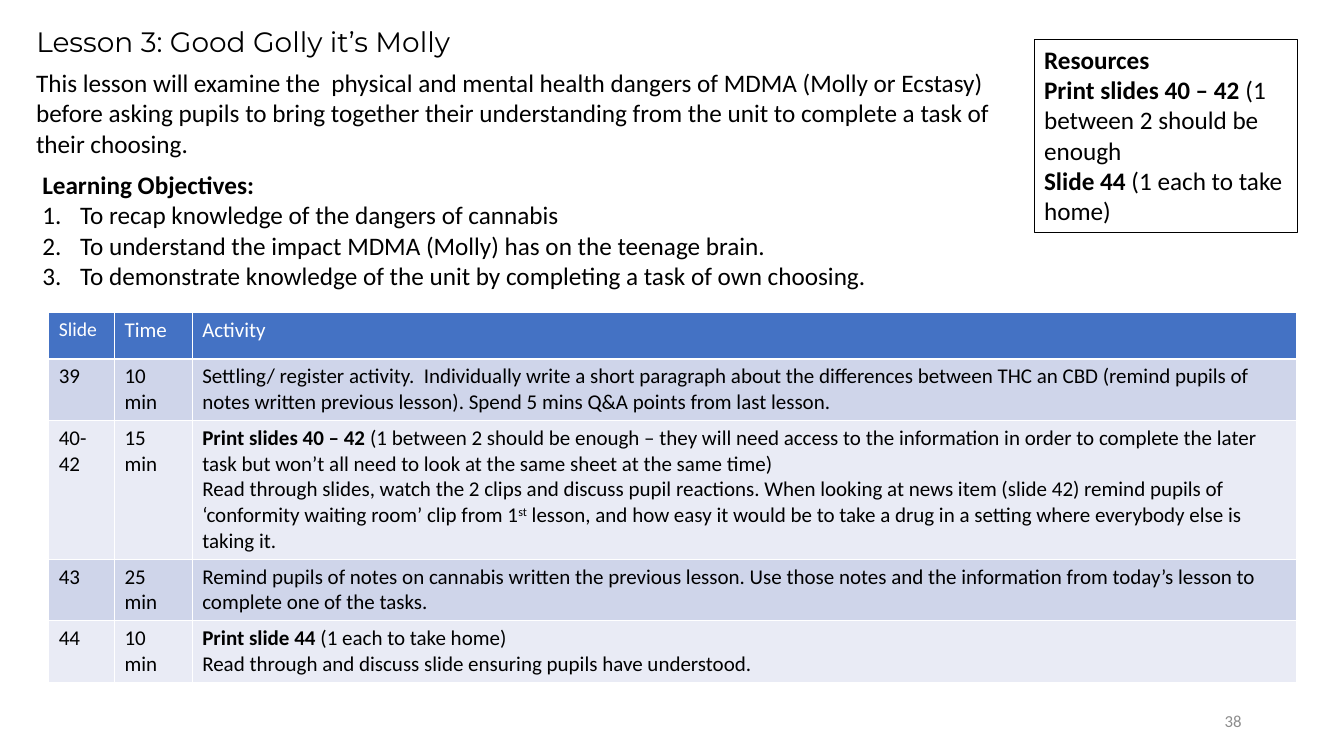
from lxml import etree
from pptx import Presentation
from pptx.dml.color import RGBColor
from pptx.enum import shapes, text
from pptx.oxml import ns
from pptx.util import Pt

COLORS = {"ink": "000000", "white": "FFFFFF", "header": "4472C4",
          "band": "CFD5EA", "light_band": "E9EBF5", "page": "8C8C8C"}

# A text is a list of paragraphs; a paragraph is a list of (words, style) runs.
HEADING = [[("Lesson 3: Good Golly it’s Molly", "")]]
INTRO = [[("This lesson will examine the  physical and mental health dangers of MDMA "
           "(Molly or Ecstasy) before asking pupils to bring together their understanding "
           "from the unit to complete a task of their choosing.", "")]]
RESOURCES = [
    [("Resources", "bold")],
    [("Print slides 40 – 42 ", "bold"), ("(1 between 2 should be enough", "")],
    [("Slide 44", "bold"), (" (1 each to take home)", "")],
]
OBJECTIVES = [
    [("Learning Objectives:", "bold")],
    [("To recap knowledge of the dangers of cannabis", "")],
    [("To understand the impact MDMA (Molly) has on the teenage brain.", "")],
    [("To demonstrate knowledge of the unit by completing a task of own choosing.", "")],
]
PAGE = [[("38", "")]]
TABLE_HEAD = ["Slide", "Time", "Activity"]
ACTIVITIES = [
    ("39", "10 min", [[
        ("Settling/ register activity.  Individually write a short paragraph about the "
         "differences between THC an CBD (remind pupils of notes written previous lesson). "
         "Spend 5 mins Q&A points from last lesson.", "")]]),
    ("40-42", "15 min", [
        [("Print slides 40 – 42 ", "bold"),
         ("(1 between 2 should be enough – they will need access to the information in order "
          "to complete the later task but won’t all need to look at the same sheet at the "
          "same time)", "")],
        [("Read through slides, watch the 2 clips and discuss pupil reactions. When looking at "
          "news item (slide 42) remind pupils of ‘conformity waiting room’ clip from 1", ""),
         ("st", "super"),
         (" lesson, and how easy it would be to take a drug in a setting where everybody else "
          "is taking it.", "")]]),
    ("43", "25 min", [[
        ("Remind pupils of notes on cannabis written the previous lesson. Use those notes and "
         "the information from today’s lesson to complete one of the tasks.", "")]]),
    ("44", "10 min", [
        [("Print slide 44", "bold"), (" (1 each to take home)", "")],
        [("Read through and discuss slide ensuring pupils have understood.", "")]]),
]
COLUMN_WIDTHS = [47, 55.5, 789]
ROW_HEIGHTS = [33, 43.5, 98, 43.5, 43.5]


def color(name):
    return RGBColor.from_string(COLORS[name])


def write(frame, paragraphs, size, ink="ink", font="Calibri", align=text.PP_ALIGN.LEFT):
    for index, runs in enumerate(paragraphs):
        line = frame.add_paragraph() if index else frame.paragraphs[0]
        line.alignment = align
        line.space_before = Pt(0)
        for words, style in runs:
            run = line.add_run()
            run.text = words
            run.font.name = font
            run.font.size = Pt(size)
            run.font.bold = style == "bold"
            run.font.color.rgb = color(ink)
            if style == "super":
                run.font._element.set("baseline", "30000")


def place(shape, left, top, width, height, anchor=text.MSO_ANCHOR.TOP):
    shape.left, shape.top, shape.width, shape.height = map(Pt, (left, top, width, height))
    frame = shape.text_frame
    frame.word_wrap = True
    frame.auto_size = text.MSO_AUTO_SIZE.NONE
    frame.vertical_anchor = anchor
    return frame


def set_bullet(line, numbered):
    props = line._p.get_or_add_pPr()
    indent = Pt(27) if numbered else 0
    props.set("marL", str(indent))
    props.set("indent", str(-indent))
    bullet = etree.SubElement(props, ns.qn("a:buAutoNum" if numbered else "a:buNone"))
    if numbered:
        bullet.set("type", "arabicPeriod")


def add_lesson_table(slide):
    rows = [TABLE_HEAD, *ACTIVITIES]
    table = slide.shapes.add_table(len(rows), len(TABLE_HEAD), Pt(34.8), Pt(223.4),
                                   Pt(sum(COLUMN_WIDTHS)), Pt(sum(ROW_HEIGHTS))).table
    for column, width in zip(table.columns, COLUMN_WIDTHS):
        column.width = Pt(width)
    for r, (row, height) in enumerate(zip(rows, ROW_HEIGHTS)):
        table.rows[r].height = Pt(height)
        fill = "header" if r == 0 else "band" if r % 2 else "light_band"
        for c, content in enumerate(row):
            cell = table.cell(r, c)
            cell.fill.solid()
            cell.fill.fore_color.rgb = color(fill)
            paragraphs = [[(content, "")]] if isinstance(content, str) else content
            write(cell.text_frame, paragraphs, 14 if r == c == 0 else 15,
                  "ink" if r else "white")


def main():
    deck = Presentation()
    deck.slide_width, deck.slide_height = Pt(960), Pt(540)
    slide = deck.slides.add_slide(deck.slide_layouts[1])
    heading, objectives = slide.placeholders

    write(place(heading, 18.7, 13.7, 483, 31.5), HEADING, 20, font="Montserrat")

    intro = slide.shapes.add_textbox(0, 0, 0, 0)
    write(place(intro, 18.7, 44.6, 720, 72.7), INTRO, 18)

    objectives_frame = place(objectives, 23, 117.4, 672, 94.5)
    write(objectives_frame, OBJECTIVES, 18)
    for index, line in enumerate(objectives_frame.paragraphs):
        set_bullet(line, numbered=index > 0)

    resources = slide.shapes.add_shape(shapes.MSO_SHAPE.RECTANGLE, 0, 0, 0, 0)
    resources.shadow.inherit = False
    resources.fill.background()
    resources.line.color.rgb = color("ink")
    resources.line.width = Pt(0.75)
    write(place(resources, 738.7, 28, 188, 138.2), RESOURCES, 18)

    add_lesson_table(slide)

    page = slide.shapes.add_textbox(0, 0, 0, 0)
    write(place(page, 678, 500.5, 216, 28.8, text.MSO_ANCHOR.MIDDLE), PAGE, 12, "page",
          align=text.PP_ALIGN.RIGHT)

    deck.save("out.pptx")


if __name__ == "__main__":
    main()
